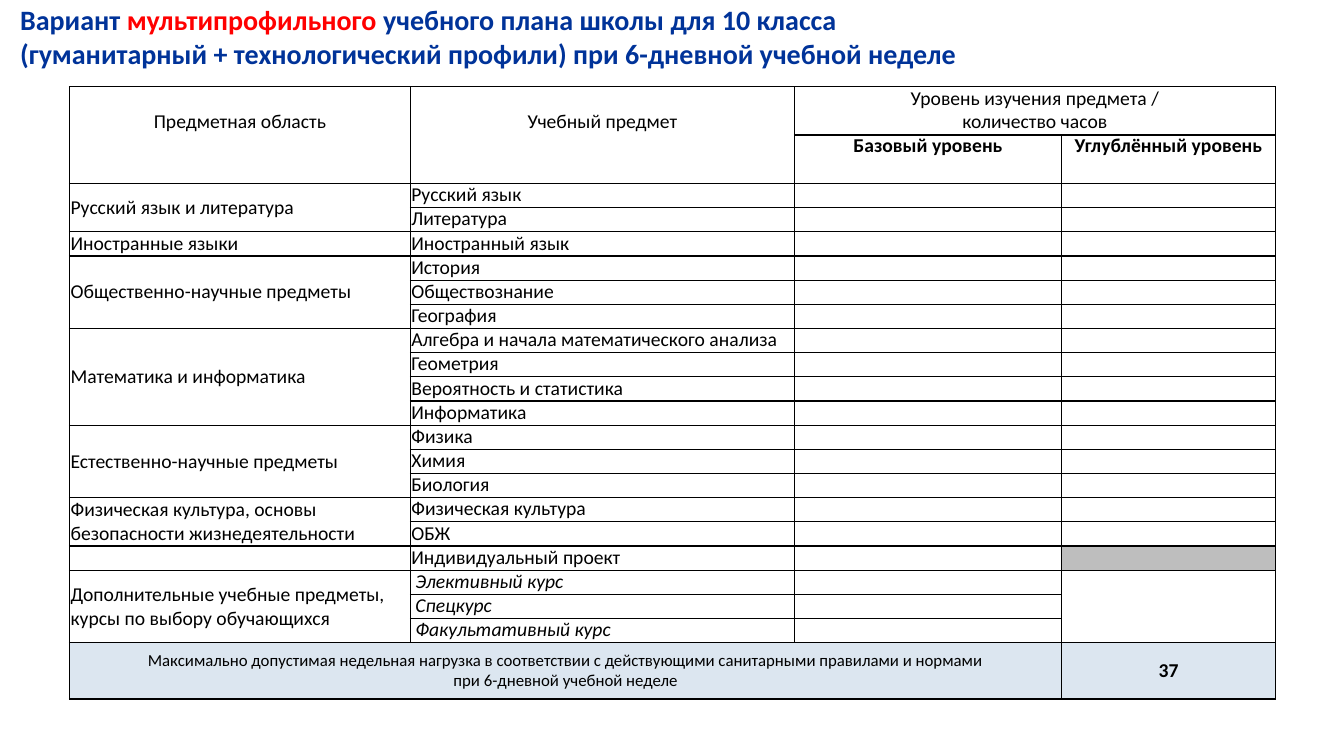
from lxml.etree import SubElement
from pptx import Presentation
from pptx.dml.color import RGBColor
from pptx.enum.text import MSO_ANCHOR, PP_ALIGN
from pptx.oxml.ns import qn
from pptx.util import Inches, Pt

COLORS = {"title": "003399", "accent": "FF0000", "text": "000000",
          "unused": "BEBEBE", "total": "DCE6F0"}
FONT = "Calibri"
TITLE = [
    [("Вариант ", "title"), ("мультипрофильного ", "accent"),
     ("учебного плана школы для 10 класса", "title")],
    [("(гуманитарный + технологический профили) при 6-дневной учебной неделе", "title")],
]
HEADINGS = ["Предметная область", "Учебный предмет"]
LEVELS_HEADING = ["Уровень изучения предмета /", "количество часов"]
LEVELS = ["Базовый уровень", "Углублённый уровень"]
PROJECT = "Индивидуальный проект"
ELECTIVES = ["Элективный курс", "Спецкурс", "Факультативный курс"]
AREAS = [
    (["Русский язык и литература"], ["Русский язык", "Литература"]),
    (["Иностранные языки"], ["Иностранный язык"]),
    (["Общественно-научные предметы"], ["История", "Обществознание", "География"]),
    (["Математика и информатика"],
     ["Алгебра и начала математического анализа", "Геометрия",
      "Вероятность и статистика", "Информатика"]),
    (["Естественно-научные предметы"], ["Физика", "Химия", "Биология"]),
    (["Физическая культура, основы", "безопасности жизнедеятельности"],
     ["Физическая культура", "ОБЖ"]),
    ([], [PROJECT]),
    (["Дополнительные учебные предметы,", "курсы по выбору обучающихся"], ELECTIVES),
]
TOTAL_LABEL = ["Максимально допустимая недельная нагрузка в соответствии с действующими "
               "санитарными правилами и нормами", "при 6-дневной учебной неделе"]
TOTAL_HOURS = "37"

COLUMN_WIDTHS = [3.38, 3.81, 2.65, 2.12]
HEADER_HEIGHT, SUBJECT_HEIGHT, TOTAL_HEIGHT = 0.48, 0.24, 0.56
LINE_PITCH = Pt(16.4)


def rgb(name):
    return RGBColor.from_string(COLORS[name])


def add_run(paragraph, text, size, color="text", bold=False, italic=False):
    run = paragraph.add_run()
    run.text = text
    run.font.name, run.font.size = FONT, Pt(size)
    run.font.bold, run.font.italic = bold, italic
    run.font.color.rgb = rgb(color)


def prepare(cell):
    """Clear the style's fill and margins, draw a thin border, keep empty cells low."""
    cell.margin_left = cell.margin_right = cell.margin_top = cell.margin_bottom = 0
    cell.vertical_anchor = MSO_ANCHOR.MIDDLE
    properties = cell._tc.get_or_add_tcPr()
    for side in ("lnL", "lnR", "lnT", "lnB"):
        line = SubElement(properties, qn(f"a:{side}"), w=str(Pt(1)))
        fill = SubElement(line, qn("a:solidFill"))
        SubElement(fill, qn("a:srgbClr"), val=COLORS["text"])
    cell.fill.background()
    end = SubElement(cell.text_frame.paragraphs[0]._p, qn("a:endParaRPr"))
    end.set("sz", "1000")


def shade(cell, color):
    cell.fill.solid()
    cell.fill.fore_color.rgb = rgb(color)


def write(cell, lines, size=14, align=PP_ALIGN.CENTER, pitch=None, indent=0, **style):
    cell.margin_left = Inches(indent)
    frame = cell.text_frame
    for number, text in enumerate(lines):
        paragraph = frame.add_paragraph() if number else frame.paragraphs[0]
        paragraph.alignment = align
        if pitch:
            paragraph.line_spacing = pitch
        add_run(paragraph, text, size, **style)


def add_title(slide):
    box = slide.shapes.add_textbox(Inches(0.19), Inches(0.02), Inches(9.4), Inches(0.7))
    frame = box.text_frame
    frame.word_wrap = True
    frame.margin_left = Inches(0.01)
    frame.margin_right = frame.margin_bottom = 0
    frame.margin_top = Inches(0.01)
    for number, parts in enumerate(TITLE):
        paragraph = frame.add_paragraph() if number else frame.paragraphs[0]
        paragraph.space_before = Pt(0 if number else 1)
        for text, color in parts:
            add_run(paragraph, text, 20, color, bold=True)


def add_plan(slide):
    subject_count = sum(len(subjects) for _, subjects in AREAS)
    heights = [HEADER_HEIGHT] * 2 + [SUBJECT_HEIGHT] * subject_count + [TOTAL_HEIGHT]
    plan = slide.shapes.add_table(
        len(heights), len(COLUMN_WIDTHS), Inches(0.69), Inches(0.86),
        Inches(sum(COLUMN_WIDTHS)), Inches(sum(heights))).table
    plan.first_row = plan.horz_banding = False
    for column, width in zip(plan.columns, COLUMN_WIDTHS):
        column.width = Inches(width)
    for row, height in zip(plan.rows, heights):
        row.height = Inches(height)
    for cell in plan.iter_cells():
        prepare(cell)

    for column, heading in enumerate(HEADINGS):
        cell = plan.cell(0, column)
        cell.merge(plan.cell(1, column))
        write(cell, [heading])
        cell.vertical_anchor = MSO_ANCHOR.TOP
        cell.margin_top = Inches(0.23)
    plan.cell(0, 2).merge(plan.cell(0, 3))
    write(plan.cell(0, 2), LEVELS_HEADING, pitch=LINE_PITCH)
    for column, level in enumerate(LEVELS, start=2):
        write(plan.cell(1, column), [level], pitch=LINE_PITCH, bold=True)
        plan.cell(1, column).vertical_anchor = MSO_ANCHOR.TOP

    row = 2
    for area, subjects in AREAS:
        last = row + len(subjects) - 1
        elective = subjects is ELECTIVES
        if last > row:
            plan.cell(row, 0).merge(plan.cell(last, 0))
        write(plan.cell(row, 0), area, align=PP_ALIGN.LEFT, indent=0.01)
        if elective:
            plan.cell(row, 3).merge(plan.cell(last, 3))
        for subject in subjects:
            write(plan.cell(row, 1), [subject], align=PP_ALIGN.LEFT, pitch=LINE_PITCH,
                  indent=0.05 if elective else 0.01, italic=elective)
            if subject == PROJECT:
                shade(plan.cell(row, 3), "unused")
            row += 1

    label, hours = plan.cell(row, 0), plan.cell(row, 3)
    label.merge(plan.cell(row, 2))
    write(label, TOTAL_LABEL, size=12)
    write(hours, [TOTAL_HOURS], bold=True)
    for cell in (label, hours):
        shade(cell, "total")


def main():
    deck = Presentation()
    deck.slide_width, deck.slide_height = Inches(13.33), Inches(7.5)
    slide = deck.slides.add_slide(deck.slide_layouts[6])
    add_title(slide)
    add_plan(slide)
    deck.save("out.pptx")


if __name__ == "__main__":
    main()
